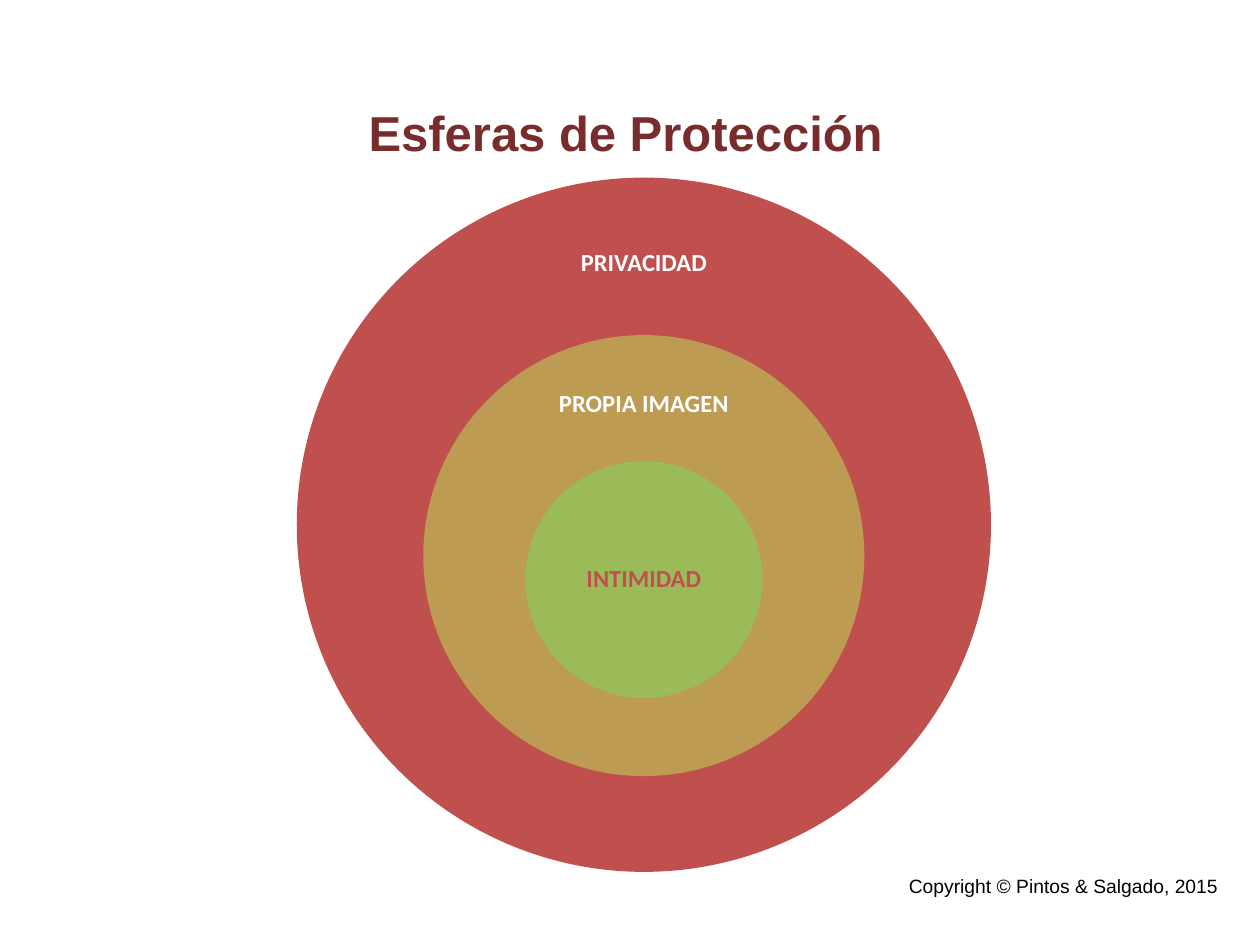
from pptx import Presentation
from pptx.dml.color import RGBColor
from pptx.enum.shapes import MSO_SHAPE
from pptx.enum.text import MSO_ANCHOR, PP_ALIGN
from pptx.util import Inches, Pt

RED, GOLD, GREEN, WHITE = "C0504D", "BD9B53", "9BBB59", "FFFFFF"


def paint(color, code):
    color.rgb = RGBColor.from_string(code)


class Deck:
    def __init__(self):
        self.prs = Presentation()
        self.prs.slide_width, self.prs.slide_height = Inches(10), Inches(7.5)
        self.slide = self.prs.slides.add_slide(self.prs.slide_layouts[5])

    def place(self, shape, box):
        shape.left, shape.top, shape.width, shape.height = map(Inches, box)

    def set_text(self, shape, text, font, size, code, bold, align, anchor, inset):
        frame = shape.text_frame
        frame.word_wrap = True
        frame.vertical_anchor = anchor
        frame.margin_left = frame.margin_right = Inches(inset)
        frame.margin_top = frame.margin_bottom = Inches(inset)
        para = frame.paragraphs[0]
        para.text, para.alignment = text, align
        para.font.name, para.font.size, para.font.bold = font, Pt(size), bold
        paint(para.font.color, code)
        return para

    def title(self, text, box):
        shape = self.slide.shapes.title
        self.place(shape, box)
        self.set_text(shape, text, "Arial", 28, "782C2C", True,
                      PP_ALIGN.CENTER, MSO_ANCHOR.TOP, 0.05)

    def disc(self, mid, top, size, code):
        box = map(Inches, (mid - size / 2, top, size, size))
        shape = self.slide.shapes.add_shape(MSO_SHAPE.OVAL, *box)
        shape.shadow.inherit = False
        shape.fill.solid()
        paint(shape.fill.fore_color, code)
        shape.line.fill.background()

    def label(self, text, mid, top, width, height, code):
        box = map(Inches, (mid - width / 2, top, width, height))
        shape = self.slide.shapes.add_textbox(*box)
        para = self.set_text(shape, text, "Calibri", 14, code, True,
                             PP_ALIGN.CENTER, MSO_ANCHOR.MIDDLE, 0.11)
        para.line_spacing = 0.9

    def footer(self, text, box):
        shape = self.slide.shapes.add_textbox(*map(Inches, box))
        self.set_text(shape, text, "Arial", 11, "000000", False,
                      PP_ALIGN.RIGHT, MSO_ANCHOR.BOTTOM, 0)


def main():
    deck = Deck()
    deck.title("Esferas de Protección", (0.28, 0.76, 9.37, 1.02))
    mid = 5.11
    # disc top, size, fill; label text, top, width, height, colour
    rings = [
        (1.41, 5.51, RED, "PRIVACIDAD", 1.68, 1.92, 0.83, WHITE),
        (2.66, 3.5, GOLD, "PROPIA IMAGEN", 2.88, 1.64, 0.66, WHITE),
        (3.66, 1.88, GREEN, "INTIMIDAD", 4.13, 1.32, 0.94, RED),
    ]
    for top, size, fill, text, *area, code in rings:
        deck.disc(mid, top, size, fill)
        deck.label(text, mid, *area, code)
    deck.footer("Copyright © Pintos & Salgado, 2015", (6.51, 6.88, 3.16, 0.24))
    deck.prs.save("out.pptx")


if __name__ == "__main__":
    main()
